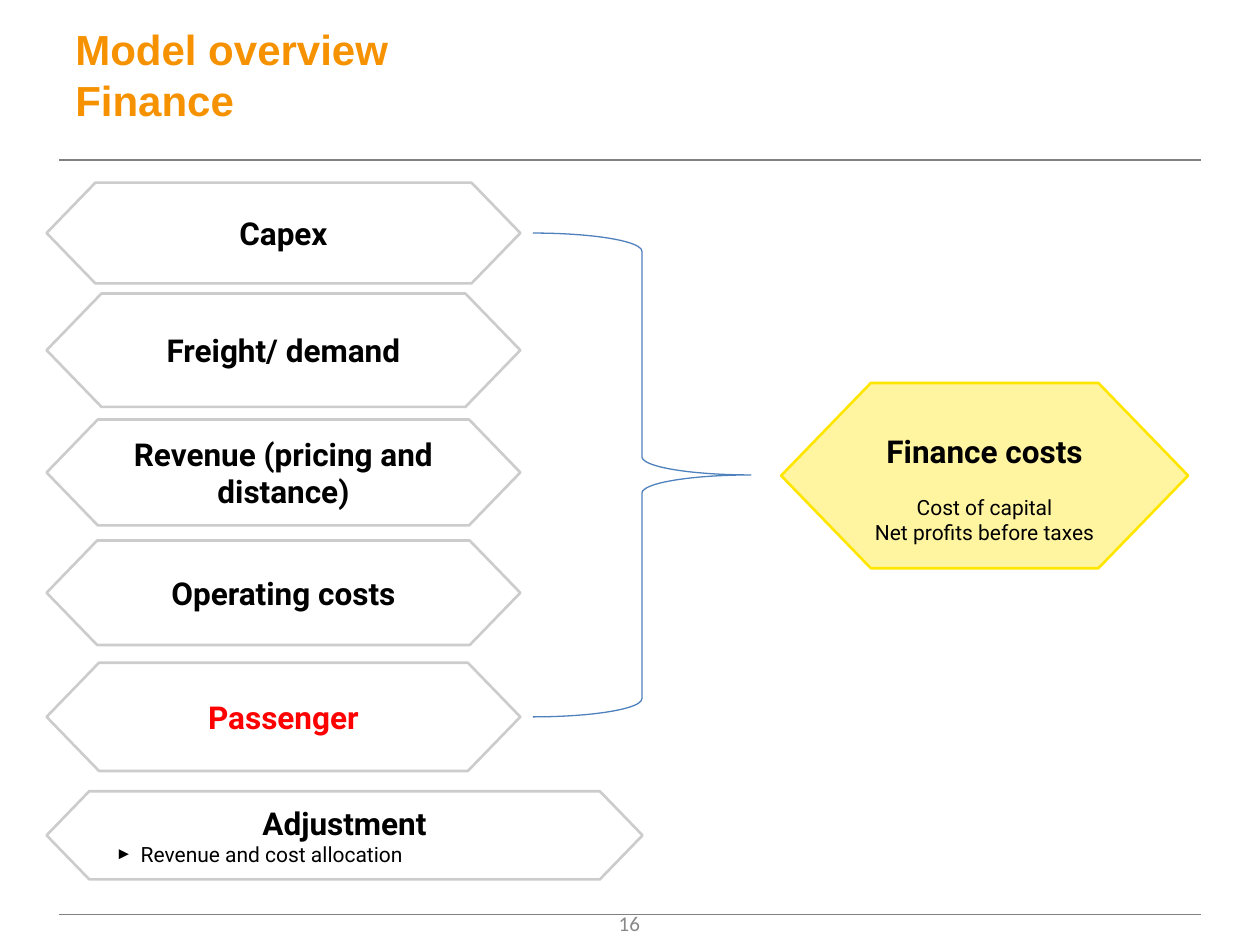
import pptx
import pptx.dml.color
import pptx.enum.shapes
import pptx.enum.text
import pptx.util
from lxml import etree
from pptx.oxml.ns import qn

RGB = pptx.dml.color.RGBColor
KIND = pptx.enum.shapes.MSO_SHAPE
ALIGN = pptx.enum.text.PP_ALIGN
MIDDLE = pptx.enum.text.MSO_ANCHOR.MIDDLE
Inch, Pt = pptx.util.Inches, pptx.util.Pt

ORANGE = RGB(0xF6, 0x92, 0x00)
YELLOW = RGB(0xFF, 0xE6, 0x00)
BLUE = RGB(0x4F, 0x81, 0xBD)
RED = RGB(0xFF, 0x00, 0x00)
BLACK = RGB(0x00, 0x00, 0x00)
WHITE = RGB(0xFF, 0xFF, 0xFF)
SILVER = RGB(0xCC, 0xCC, 0xCC)
GREY = RGB(0x80, 0x80, 0x80)
PALE = RGB(0x89, 0x89, 0x89)

WIDE, HIGH = 10, 7.5
MARGIN = 0.47


def style(para, size, color, bold=False, face="Roboto", align=ALIGN.CENTER):
    para.alignment = align
    for run in para.runs:
        font = run.font
        font.name, font.size, font.bold = face, Pt(size), bold
        font.color.rgb = color


def label(slide, box, text, size, color, **look):
    shape = slide.shapes.add_textbox(*map(Inch, box))
    frame = shape.text_frame
    frame.word_wrap = True
    frame.vertical_anchor = MIDDLE
    frame.text = text
    style(frame.paragraphs[0], size, color, **look)


def rule(slide, y):
    line = slide.shapes.add_connector(
        pptx.enum.shapes.MSO_CONNECTOR.STRAIGHT,
        Inch(MARGIN), Inch(y), Inch(WIDE - MARGIN), Inch(y))
    line.line.color.rgb = GREY
    line.line.width = Pt(0.75)
    etree.SubElement(line._element.spPr, qn("a:effectLst"))


def hexagon(slide, box, heads, notes=(), fill=WHITE, edge=SILVER, ink=BLACK):
    """Draw a hexagon with bold heads and smaller notes; return its frame."""
    shape = slide.shapes.add_shape(KIND.HEXAGON, *map(Inch, box))
    shape.shadow.inherit = False
    shape.adjustments[0] = 0.484
    shape.fill.solid()
    shape.fill.fore_color.rgb = fill
    shape.line.color.rgb = edge
    shape.line.width = Pt(1.5)
    frame = shape.text_frame
    frame.word_wrap = bool(notes) and fill == WHITE
    frame.vertical_anchor = MIDDLE
    frame.margin_left = frame.margin_right = Inch(0.04)
    frame.margin_top = frame.margin_bottom = Inch(0.04)
    frame.text = "\n".join([*heads, *notes])
    for i, para in enumerate(frame.paragraphs):
        head = i < len(heads)
        style(para, 18 if head else 12, ink, bold=head)
    return shape


def header(slide, box):
    x, y, w, h = box
    label(slide, box, "Model overview\vFinance", 24, ORANGE,
          bold=True, face="Arial", align=ALIGN.LEFT)
    rule(slide, y + h + 0.12)


def inputs(slide, box):
    """Stack the model inputs; each gap is a little wider than the last."""
    x, y, w, h = box
    rows = [
        (0.80, ["Capex"], BLACK),
        (0.90, ["Freight/ demand"], BLACK),
        (0.84, ["Revenue (pricing and", "distance)"], BLACK),
        (0.83, ["Operating costs"], BLACK),
        (0.86, ["Passenger"], RED),
    ]
    gaps = [0.08 + 0.02 * i for i in range(len(rows) - 1)] + [0]
    unit = h / (sum(row[0] for row in rows) + sum(gaps))
    for (tall, heads, ink), gap in zip(rows, gaps):
        hexagon(slide, (x, y, w, tall * unit), heads, ink=ink)
        y += (tall + gap) * unit


def brace(slide, box):
    shape = slide.shapes.add_shape(KIND.RIGHT_BRACE, *map(Inch, box))
    shape.shadow.inherit = False
    shape.fill.background()
    shape.line.color.rgb = BLUE
    shape.line.width = Pt(0.75)


def result(slide, box):
    shape = hexagon(slide, box, ["Finance costs"],
                    ["Cost of capital", "Net profits before taxes"],
                    fill=YELLOW, edge=YELLOW)
    # Fill at 37 % opacity
    tint = shape._element.spPr.find(qn("a:solidFill"))[0]
    etree.SubElement(tint, qn("a:alpha"), val="37000")
    # Text sits one small line below the middle
    frame = shape.text_frame
    frame.margin_top = Inch(0.24)
    frame.paragraphs[1].space_before = Pt(14)


def adjust(slide, box):
    shape = hexagon(slide, box, ["Adjustment"], ["Revenue and cost allocation"])
    note = shape.text_frame.paragraphs[1]
    note.alignment = ALIGN.LEFT
    props = note._p.get_or_add_pPr()
    props.set("marL", str(Inch(0.2)))
    props.set("indent", str(-Inch(0.2)))
    etree.SubElement(props, qn("a:buSzPct"), val="80000")
    etree.SubElement(props, qn("a:buFont"), typeface="Arial")
    etree.SubElement(props, qn("a:buChar"), char="►")


def footer(slide, box):
    x, y, w, h = box
    rule(slide, y + 0.13)
    label(slide, box, "16", 12, PALE, face="Calibri")


def main():
    deck = pptx.Presentation()
    deck.slide_width, deck.slide_height = Inch(WIDE), Inch(HIGH)
    slide = deck.slides.add_slide(deck.slide_layouts[6])
    footer(slide, (3.83, 7.13, 2.33, 0.4))
    header(slide, (0.5, 0.03, 9, 1.12))
    result(slide, (6.2, 3.04, 3.23, 1.47))
    inputs(slide, (0.37, 1.45, 3.76, 4.67))
    brace(slide, (4.23, 1.85, 1.73, 3.84))
    adjust(slide, (0.37, 6.28, 4.73, 0.7))
    deck.save("out.pptx")


if __name__ == "__main__":
    main()
